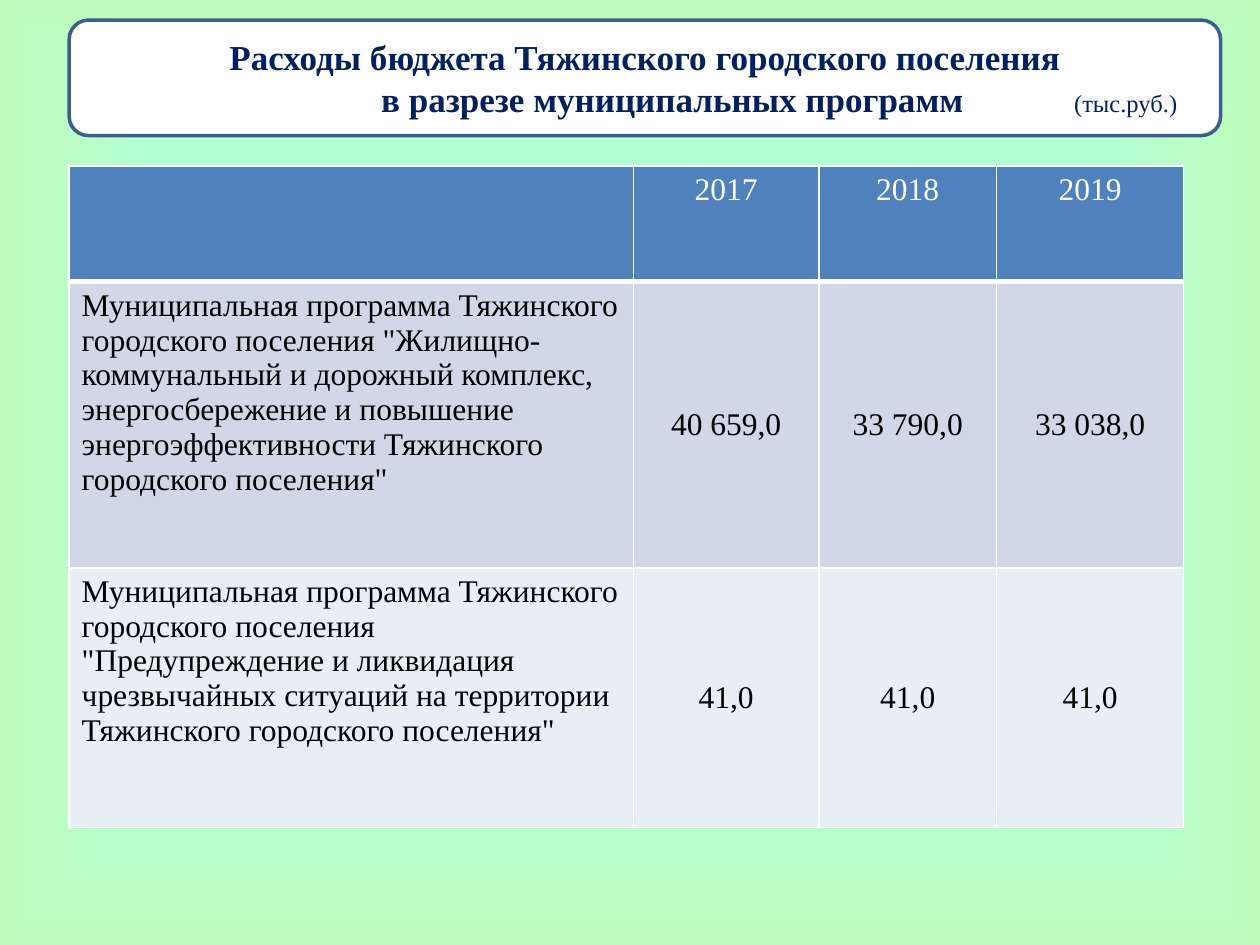
from pptx import Presentation
from pptx.dml.color import RGBColor
from pptx.enum.shapes import MSO_SHAPE as SHAPE
from pptx.enum.text import MSO_ANCHOR as ANCHOR, PP_ALIGN as ALIGN
from pptx.oxml import parse_xml
from pptx.oxml.ns import nsdecls, qn
from pptx.util import Pt

FONT = "Times New Roman"
NAVY, WHITE, BLACK = "002060", "FFFFFF", "000000"
COL_WIDTHS = [322.5, 106, 101.5, 107]
ROW_HEIGHTS = [66, 163.5, 148.5]
ROW_FILLS = ["4F81BD", "D0D8E8", "E9EDF4"]
ROWS = [
    ["", "2017", "2018", "2019"],
    ['Муниципальная программа Тяжинского городского поселения "Жилищно-коммунальный '
     'и дорожный комплекс, энергосбережение и повышение энергоэффективности '
     'Тяжинского городского поселения"', "40 659,0", "33 790,0", "33 038,0"],
    ['Муниципальная программа Тяжинского городского поселения "Предупреждение и '
     'ликвидация чрезвычайных ситуаций на территории Тяжинского городского '
     'поселения"', "41,0", "41,0", "41,0"],
]


def rgb(color):
    return RGBColor.from_string(color)


def fill_solid(obj, color):
    obj.fill.solid()
    obj.fill.fore_color.rgb = rgb(color)


def add_run(p, text, size, color, bold=False):
    r = p.add_run()
    r.text = text
    for name, value in dict(name=FONT, size=Pt(size), bold=bold).items():
        setattr(r.font, name, value)
    r.font.color.rgb = rgb(color)


def set_background(s):
    """Gradient that runs from the slide's centre out to its edges."""
    s.background.fill.gradient()
    old = s._element.find(".//" + qn("a:gradFill"))
    new = parse_xml(
        f'<a:gradFill {nsdecls("a")} rotWithShape="1"><a:gsLst>'
        '<a:gs pos="3000"><a:srgbClr val="83FBA0"/></a:gs>'
        '<a:gs pos="66000"><a:srgbClr val="B3FFD4"><a:alpha val="52000"/></a:srgbClr></a:gs>'
        '<a:gs pos="100000"><a:srgbClr val="BFFCBC"/></a:gs></a:gsLst>'
        '<a:path path="rect"><a:fillToRect l="50000" t="50000" r="50000" b="50000"/></a:path>'
        '</a:gradFill>')
    old.getparent().replace(old, new)


def set_tabs(p, stops):
    tabs = "".join(f'<a:tab pos="{Pt(pos)}" algn="l"/>' for pos in stops)
    p._p.get_or_add_pPr().append(
        parse_xml(f'<a:tabLst {nsdecls("a")}>{tabs}</a:tabLst>'))


def add_title(s):
    sp = s.shapes.add_shape(SHAPE.ROUNDED_RECTANGLE, Pt(39.5), Pt(11.5), Pt(658), Pt(66))
    sp.shadow.inherit = False
    fill_solid(sp, WHITE)
    sp.line.color.rgb = rgb("3A5F8C")
    sp.line.width = Pt(2)
    tf = sp.text_frame
    tf.word_wrap = True
    tf.vertical_anchor = ANCHOR.MIDDLE
    p = tf.paragraphs[0]
    p.alignment = ALIGN.CENTER
    add_run(p, "Расходы бюджета Тяжинского городского поселения", 20, NAVY, True)
    p = tf.add_paragraph()
    p.alignment = ALIGN.LEFT
    set_tabs(p, [168, 564])
    add_run(p, "\tв разрезе муниципальных программ", 20, NAVY, True)
    add_run(p, "\t(тыс.руб.)", 14, NAVY)


def set_borders(cell, bottom):
    tc_pr = cell._tc.get_or_add_tcPr()
    for i, (side, width) in enumerate(dict(L=1, R=1, T=1, B=bottom).items()):
        tc_pr.insert(i, parse_xml(
            f'<a:ln{side} {nsdecls("a")} w="{Pt(width)}"><a:solidFill>'
            f'<a:srgbClr val="{WHITE}"/></a:solidFill></a:ln{side}>'))


def fill_cell(cell, text, row, col):
    header = row == 0
    fill_solid(cell, ROW_FILLS[row])
    set_borders(cell, 3 if header else 1)
    p = cell.text_frame.paragraphs[0]
    if col:
        p.alignment = ALIGN.CENTER
        cell.vertical_anchor = ANCHOR.TOP if header else ANCHOR.MIDDLE
    if text:
        add_run(p, text, 18, WHITE if header else BLACK)


def add_budget_table(s):
    table = s.shapes.add_table(len(ROWS), len(COL_WIDTHS), Pt(39.5), Pt(95),
                               Pt(sum(COL_WIDTHS)), Pt(sum(ROW_HEIGHTS))).table
    for column, width in zip(table.columns, COL_WIDTHS):
        column.width = Pt(width)
    for i, (row, height) in enumerate(zip(table.rows, ROW_HEIGHTS)):
        row.height = Pt(height)
        for j, text in enumerate(ROWS[i]):
            fill_cell(table.cell(i, j), text, i, j)


def main():
    prs = Presentation()
    prs.slide_width, prs.slide_height = Pt(720), Pt(540)
    s = prs.slides.add_slide(prs.slide_layouts[6])
    set_background(s)
    add_budget_table(s)
    add_title(s)
    prs.save("out.pptx")


if __name__ == "__main__":
    main()
